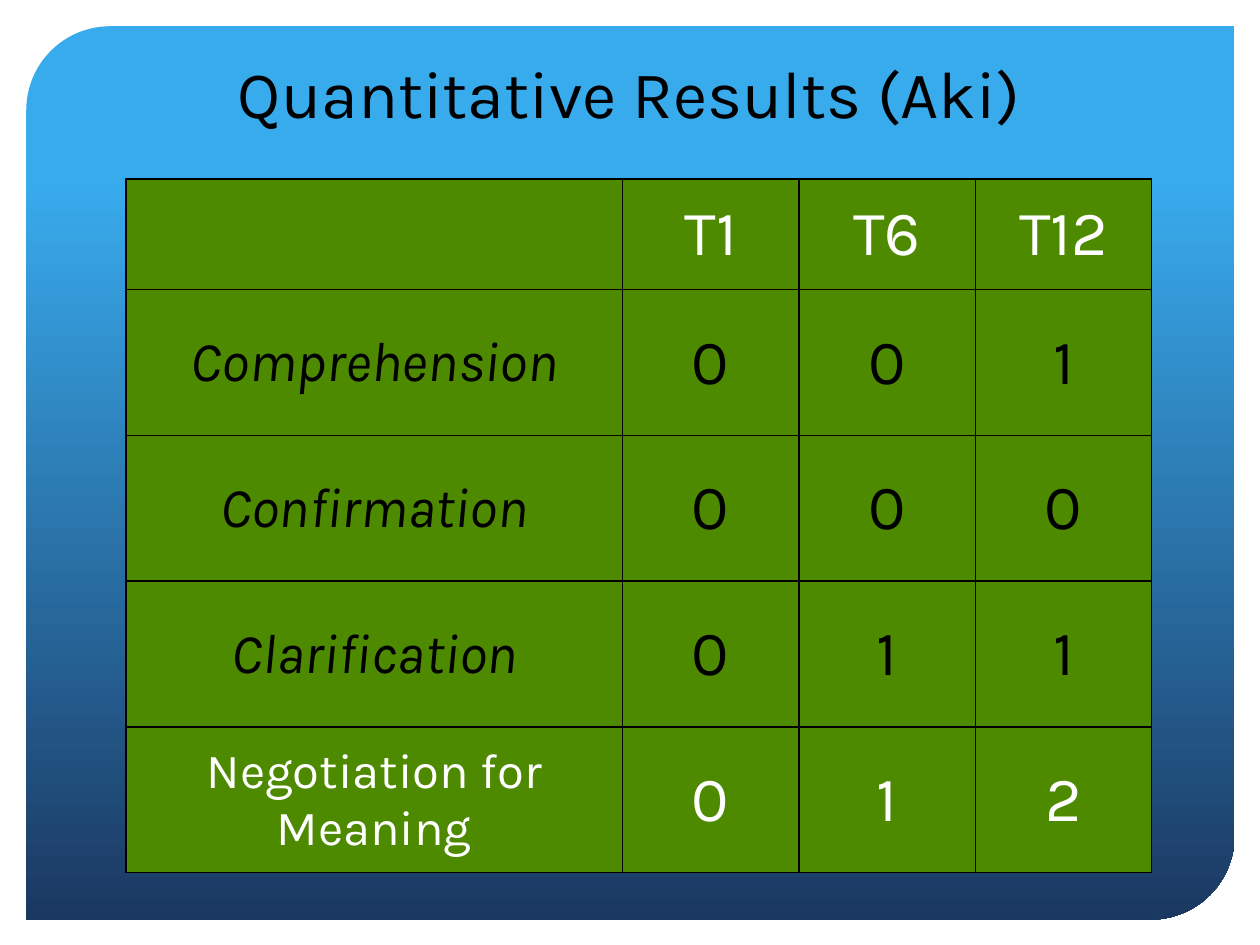
import dataclasses

import pptx
import pptx.dml.color
import pptx.enum.shapes
import pptx.enum.text
import pptx.util
from pptx.oxml import parse_xml
from pptx.oxml.ns import nsdecls

Pt = pptx.util.Pt
RGB = pptx.dml.color.RGBColor.from_string
ANCHOR = pptx.enum.text.MSO_ANCHOR
CENTER = pptx.enum.text.PP_ALIGN.CENTER


@dataclasses.dataclass(frozen=True)
class Theme:
    font: str = "Karla"
    dark: str = "000000"
    light: str = "FFFFFF"
    cell: str = "4E8A00"
    gradient: tuple = ((0.17, "38ABED"), (1, "1B3861"))
    title_size: int = 38
    value_size: int = 36
    label_size: int = 32
    total_size: int = 28


THEME = Theme()
HEADER = ["", "T1", "T6", "T12"]
CHECKS = [
    ["Comprehension", "0", "0", "1"],
    ["Confirmation", "0", "0", "0"],
    ["Clarification", "0", "1", "1"],
]
TOTAL = ["Negotiation for Meaning", "0", "1", "2"]
COL_WIDTHS = [283.7] + [100.8] * 3
ROW_HEIGHTS = [63.4] + [83.3] * 4


def apply(obj, formats):
    for name, value in formats.items():
        setattr(obj, name, value)


def write(tf, text, size, color, italic=False):
    p = tf.paragraphs[0]
    p.alignment = CENTER
    r = p.add_run()
    r.text = text
    apply(r.font, {"name": THEME.font, "size": Pt(size), "italic": italic, "bold": False})
    r.font.color.rgb = RGB(color)


def add_panel(s):
    """Draw the gradient panel behind everything else."""
    sp = s.shapes.add_shape(
        pptx.enum.shapes.MSO_SHAPE.ROUND_2_DIAG_RECTANGLE,
        Pt(15), Pt(15), Pt(690.5), Pt(510.5))
    sp.adjustments[0], sp.adjustments[1] = 0.094, 0
    sp.shadow.inherit = False
    sp.line.fill.background()
    sp.fill.gradient()
    sp.fill.gradient_angle = 270
    for stop, (position, color) in zip(sp.fill.gradient_stops, THEME.gradient):
        stop.position = position
        stop.color.rgb = RGB(color)
    s.shapes._spTree.insert(2, sp._element)


def set_title(s, text):
    sp = s.shapes.title
    apply(sp, {"left": Pt(61.2), "top": Pt(-2.9), "width": Pt(596.9), "height": Pt(82.1)})
    apply(sp.text_frame, {"word_wrap": True, "vertical_anchor": ANCHOR.BOTTOM,
                          "auto_size": pptx.enum.text.MSO_AUTO_SIZE.NONE})
    write(sp.text_frame, text, THEME.title_size, THEME.dark)


def format_cell(cell):
    apply(cell, {"vertical_anchor": ANCHOR.MIDDLE, "margin_left": Pt(0.7),
                 "margin_right": Pt(0.7), "margin_top": Pt(0.7), "margin_bottom": 0})
    tcPr = cell._tc.get_or_add_tcPr()
    for side in ("lnL", "lnR", "lnT", "lnB"):
        tcPr.append(parse_xml(
            f'<a:{side} {nsdecls("a")} w="{Pt(1)}"><a:solidFill>'
            f'<a:srgbClr val="{THEME.dark}"/></a:solidFill></a:{side}>'))
    cell.fill.solid()
    cell.fill.fore_color.rgb = RGB(THEME.cell)


def add_results_table(s):
    rows = [HEADER, *CHECKS, TOTAL]
    table = s.shapes.add_table(
        len(rows), len(HEADER), Pt(72), Pt(102.2),
        Pt(sum(COL_WIDTHS)), Pt(sum(ROW_HEIGHTS))).table
    for col, width in zip(table.columns, COL_WIDTHS):
        col.width = Pt(width)
    for row, height in zip(table.rows, ROW_HEIGHTS):
        row.height = Pt(height)
    for i, values in enumerate(rows):
        is_check = values in CHECKS
        color = THEME.dark if is_check else THEME.light
        label_size = THEME.label_size if is_check else THEME.total_size
        for j, text in enumerate(values):
            cell = table.cell(i, j)
            format_cell(cell)
            if text:
                size = THEME.value_size if j else label_size
                write(cell.text_frame, text, size, color, italic=is_check and j == 0)


def main():
    prs = pptx.Presentation()
    apply(prs, {"slide_width": Pt(720), "slide_height": Pt(540)})
    s = prs.slides.add_slide(prs.slide_layouts[5])
    add_panel(s)
    set_title(s, "Quantitative Results (Aki)")
    add_results_table(s)
    prs.save("out.pptx")


if __name__ == "__main__":
    main()
